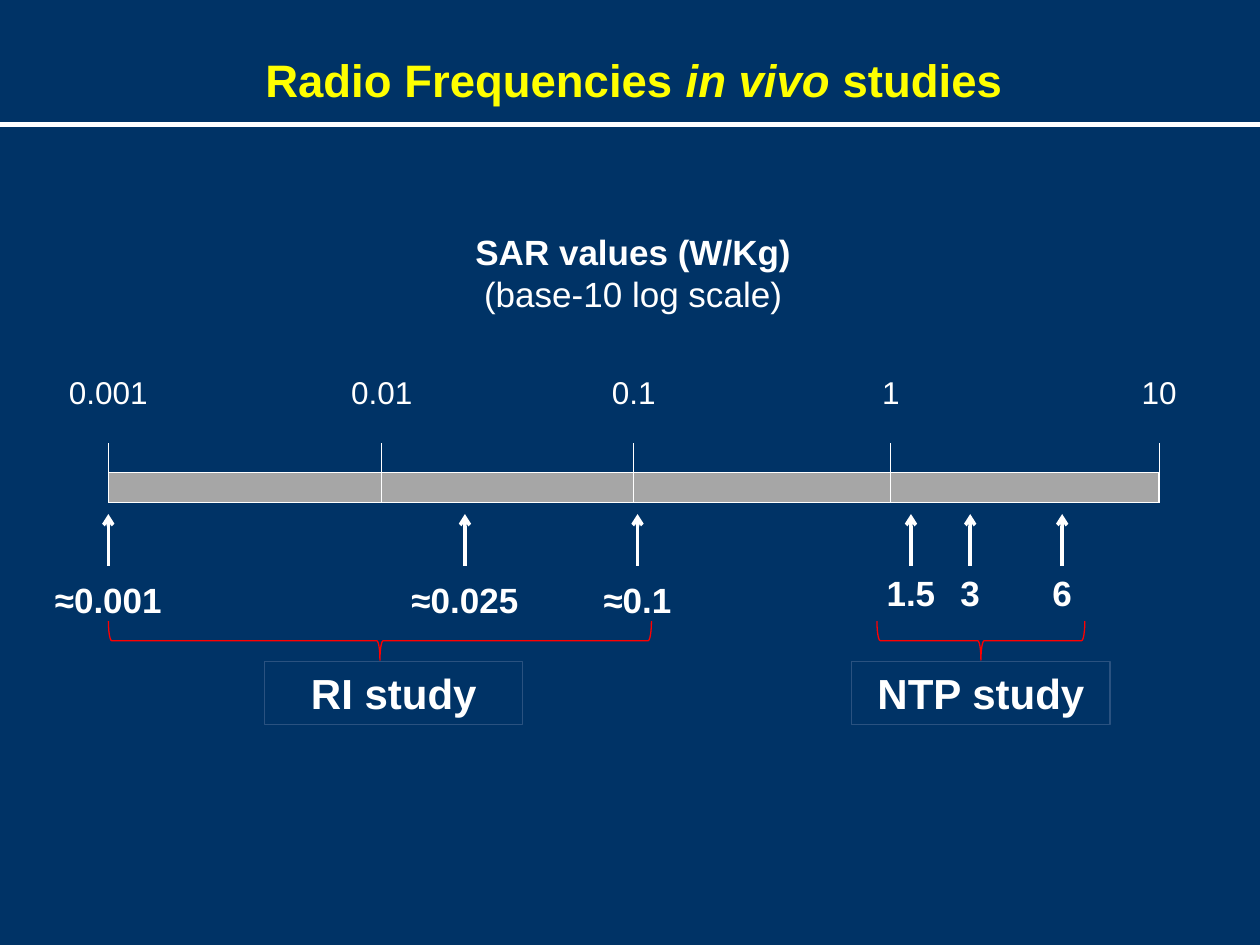
import pptx
import pptx.util
import pptx.dml.color
import pptx.enum.shapes
import pptx.enum.text
import pptx.oxml.ns
from lxml import etree

RGBColor = pptx.dml.color.RGBColor
Shape = pptx.enum.shapes.MSO_SHAPE

NAVY = RGBColor(0x00, 0x33, 0x66)
YELLOW = RGBColor(0xFF, 0xFF, 0x00)
WHITE = RGBColor(0xFF, 0xFF, 0xFF)
GREY = RGBColor(0xA6, 0xA6, 0xA6)
RED = RGBColor(0xFF, 0x00, 0x00)
STEEL = RGBColor(0x2A, 0x52, 0x80)

FONT = "Arial"
COLUMNS, ROWS = 100, 75
CELL = pptx.util.Inches(0.1)

SCALE = [("0.001", 8.6), ("0.01", 30.3), ("0.1", 50.3), ("1", 70.7), ("10", 92)]
RI_DOSES = [("≈0.001", 8.6), ("≈0.025", 36.9), ("≈0.1", 50.6)]
NTP_DOSES = [("1.5", 72.3), ("3", 77), ("6", 84.3)]
LABEL_WIDTH = 12
BAR_TOP, BAR_HEIGHT = 37.5, 2.4
BRACE_TOP, BRACE_HEIGHT = 49.3, 3.1
STUDY_TOP, STUDY_WIDTH, STUDY_HEIGHT = 52.5, 20.5, 5


def grid(*cells):
    return [round(cell * CELL) for cell in cells]


def write_text(box, lines, size=20, color=WHITE, bold=False):
    frame = box.text_frame
    frame.word_wrap = True
    frame.auto_size = pptx.enum.text.MSO_AUTO_SIZE.SHAPE_TO_FIT_TEXT
    frame.vertical_anchor = pptx.enum.text.MSO_ANCHOR.TOP
    for index, spans in enumerate(lines):
        para = frame.add_paragraph() if index else frame.paragraphs[0]
        para.alignment = pptx.enum.text.PP_ALIGN.CENTER
        for words, style in spans:
            span = para.add_run()
            span.text = words
            span.font.name = FONT
            span.font.size = pptx.util.Pt(size)
            span.font.color.rgb = color
            span.font.bold = style.get("bold", bold)
            span.font.italic = style.get("italic", False)


def add_title(page, spans):
    title = page.shapes.title
    title.left, title.top, title.width, title.height = grid(18.5, 3.6, 63.6, 5.4)
    write_text(title, [spans], size=26, color=YELLOW, bold=True)


def add_label(page, text, center, top, size=20, bold=False):
    box = page.shapes.add_textbox(*grid(center - LABEL_WIDTH / 2, top, LABEL_WIDTH, 4))
    write_text(box, [[(text, {})]], size=size, bold=bold)


def add_line(page, start, end, width=0.75, arrow=False):
    line = page.shapes.add_connector(
        pptx.enum.shapes.MSO_CONNECTOR.STRAIGHT, *grid(*start, *end))
    line.line.color.rgb = WHITE
    line.line.width = pptx.util.Pt(width)
    if arrow:
        etree.SubElement(line.line._get_or_add_ln(),
                         pptx.oxml.ns.qn("a:tailEnd"), type="arrow")
    etree.SubElement(line._element.spPr, pptx.oxml.ns.qn("a:effectLst"))


def add_outline(page, kind, left, top, width, height, color, fill=None):
    shape = page.shapes.add_shape(kind, *grid(left, top, width, height))
    shape.shadow.inherit = False
    shape.line.color.rgb = color
    shape.line.width = pptx.util.Pt(0.75)
    if fill is None:
        shape.fill.background()
    else:
        shape.fill.solid()
        shape.fill.fore_color.rgb = fill
    return shape


def add_scale(page):
    left, right = SCALE[0][1], SCALE[-1][1]
    add_outline(page, Shape.RECTANGLE, left, BAR_TOP, right - left, BAR_HEIGHT,
                WHITE, fill=GREY)
    for text, column in SCALE:
        add_line(page, (column, 35.2), (column, BAR_TOP + BAR_HEIGHT))
        add_label(page, text, column, 29.1, size=18)


def add_doses(page, doses, label_top):
    for text, column in doses:
        add_line(page, (column, 44.9), (column, 40.8), width=2, arrow=True)
        add_label(page, text, column, label_top, bold=True)


def add_study(page, name, brace_left, brace_width, box_left):
    middle = brace_left + brace_width / 2
    brace = add_outline(page, Shape.RIGHT_BRACE, middle - BRACE_HEIGHT / 2,
                        BRACE_TOP + (BRACE_HEIGHT - brace_width) / 2,
                        BRACE_HEIGHT, brace_width, RED)
    brace.rotation = 90
    box = add_outline(page, Shape.RECTANGLE, box_left, STUDY_TOP,
                      STUDY_WIDTH, STUDY_HEIGHT, STEEL)
    write_text(box, [[(name, {})]], size=24, bold=True)


def main():
    deck = pptx.Presentation()
    deck.slide_width, deck.slide_height = grid(COLUMNS, ROWS)
    page = deck.slides.add_slide(deck.slide_layouts.get_by_name("Title Only"))
    page.background.fill.solid()
    page.background.fill.fore_color.rgb = NAVY

    add_line(page, (0, 9.9), (COLUMNS, 9.9), width=3)
    add_title(page, [("Radio Frequencies ", {}), ("in vivo ", {"italic": True}),
                     ("studies", {})])
    heading = page.shapes.add_textbox(*grid(35.8, 17.8, 28.9, 7.7))
    write_text(heading, [[("SAR values (W/Kg)", {"bold": True})],
                         [("(base-10 log scale)", {})]])
    add_scale(page)
    add_doses(page, RI_DOSES, label_top=45.4)
    add_doses(page, NTP_DOSES, label_top=44.9)
    add_study(page, "RI study", brace_left=8.6, brace_width=43.1, box_left=21)
    add_study(page, "NTP study", brace_left=69.6, brace_width=16.5, box_left=67.6)
    deck.save("out.pptx")


if __name__ == "__main__":
    main()
